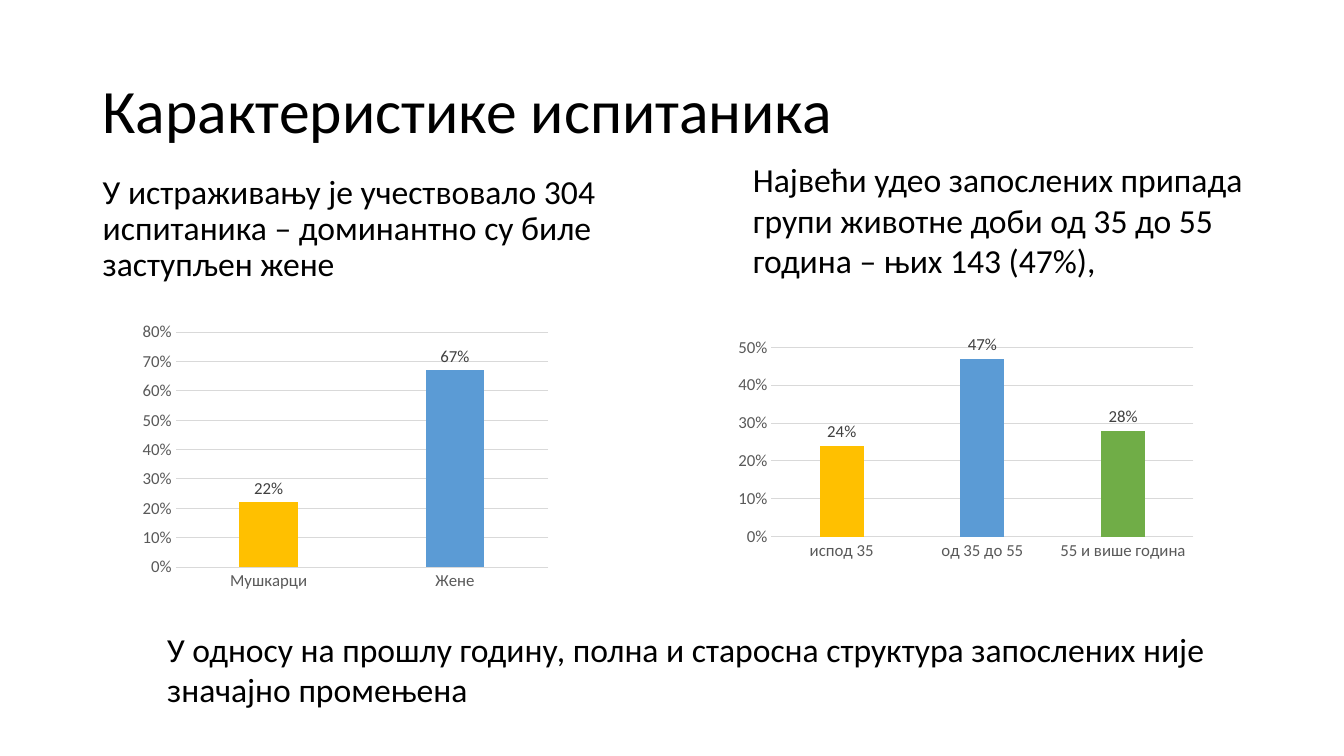
from pptx import Presentation
from pptx.chart.data import CategoryChartData
from pptx.dml.color import RGBColor
from pptx.enum import chart as ch, text as tx
from pptx.util import Inches, Pt

FONT = "Calibri"
BLACK = RGBColor(0x00, 0x00, 0x00)
AXIS_TEXT = RGBColor(0x59, 0x59, 0x59)
LABEL_TEXT = RGBColor(0x40, 0x40, 0x40)
GRID = RGBColor(0xD9, 0xD9, 0xD9)
GOLD = RGBColor(0xFF, 0xC0, 0x00)
BLUE = RGBColor(0x5B, 0x9B, 0xD5)
GREEN = RGBColor(0x70, 0xAD, 0x47)

# Content: text, place (left, top, width, height), size, line spacing, anchor
TOP, MIDDLE = tx.MSO_ANCHOR.TOP, tx.MSO_ANCHOR.MIDDLE
TEXTS = [
    ("Карактеристике испитаника", (0.92, 0.4, 11.5, 1.45), 44, 0.9, MIDDLE),
    ("У истраживању је учествовало 304 испитаника – доминантно су биле "
     "заступљен жене", (0.92, 1.69, 5.52, 5.07), 24, 0.9, TOP),
    ("Највећи удео запослених припада групи животне доби од 35 до 55 "
     "година – њих 143 (47%),", (7.37, 1.53, 5.27, 1.31), 24, 1.0, TOP),
    ("У односу на прошлу годину, полна и старосна структура запослених "
     "није значајно промењена", (1.56, 6.19, 10.5, 1.31), 24, 1.0, TOP),
]

# Content: place, axis maximum, bars (category, share, colour)
CHARTS = [
    ((1.33, 3.14, 4.19, 2.78), 0.8,
     [("Мушкарци", 0.22, GOLD), ("Жене", 0.67, BLUE)]),
    ((7.23, 3.3, 4.7, 2.31), 0.5,
     [("испод 35", 0.24, GOLD), ("од 35 до 55", 0.47, BLUE),
      ("55 и више година", 0.28, GREEN)]),
]


def style_font(font, size, color):
    font.name = FONT
    font.size = Pt(size)
    font.color.rgb = color


def add_text(page, words, place, size, spacing, anchor):
    box = page.shapes.add_textbox(*map(Inches, place))
    frame = box.text_frame
    frame.word_wrap = True
    frame.vertical_anchor = anchor
    para = frame.paragraphs[0]
    para.line_spacing = spacing
    span = para.add_run()
    span.text = words
    style_font(span.font, size, BLACK)


def style_axes(chart, maximum):
    for axis in (chart.category_axis, chart.value_axis):
        axis.major_tick_mark = axis.minor_tick_mark = ch.XL_TICK_MARK.NONE
        style_font(axis.tick_labels.font, 12, AXIS_TEXT)
    base = chart.category_axis.format.line
    base.color.rgb = GRID
    base.width = Pt(0.75)

    values = chart.value_axis
    values.minimum_scale, values.maximum_scale = 0, maximum
    values.major_unit = 0.1
    values.tick_labels.number_format = "0%"
    values.tick_labels.number_format_is_linked = False
    values.format.line.fill.background()
    values.has_major_gridlines = True
    grid = values.major_gridlines.format.line
    grid.color.rgb = GRID
    grid.width = Pt(0.75)


def add_bars(page, place, maximum, bars):
    data = CategoryChartData(number_format="0%")
    data.categories = [name for name, _, _ in bars]
    data.add_series("Series 1", [share for _, share, _ in bars])
    chart = page.shapes.add_chart(
        ch.XL_CHART_TYPE.COLUMN_CLUSTERED, *map(Inches, place), data).chart
    chart.has_title = chart.has_legend = False
    style_font(chart.font, 10, BLACK)
    style_axes(chart, maximum)

    # Columns and their labels
    plot = chart.plots[0]
    plot.vary_by_categories = False
    plot.gap_width, plot.overlap = 219, -27
    series = plot.series[0]
    series.format.fill.solid()
    series.format.fill.fore_color.rgb = BLUE
    for index, (_, _, color) in enumerate(bars):
        if color != BLUE:
            fill = series.points[index].format.fill
            fill.solid()
            fill.fore_color.rgb = color
    labels = series.data_labels
    labels.show_value = True
    labels.position = ch.XL_LABEL_POSITION.OUTSIDE_END
    labels.number_format = "0%"
    labels.number_format_is_linked = False
    style_font(labels.font, 12, LABEL_TEXT)


def main():
    deck = Presentation()
    deck.slide_width, deck.slide_height = Inches(13.33), Inches(7.5)
    page = deck.slides.add_slide(deck.slide_layouts[6])
    for item in TEXTS:
        add_text(page, *item)
    for item in CHARTS:
        add_bars(page, *item)
    deck.save("out.pptx")


if __name__ == "__main__":
    main()
